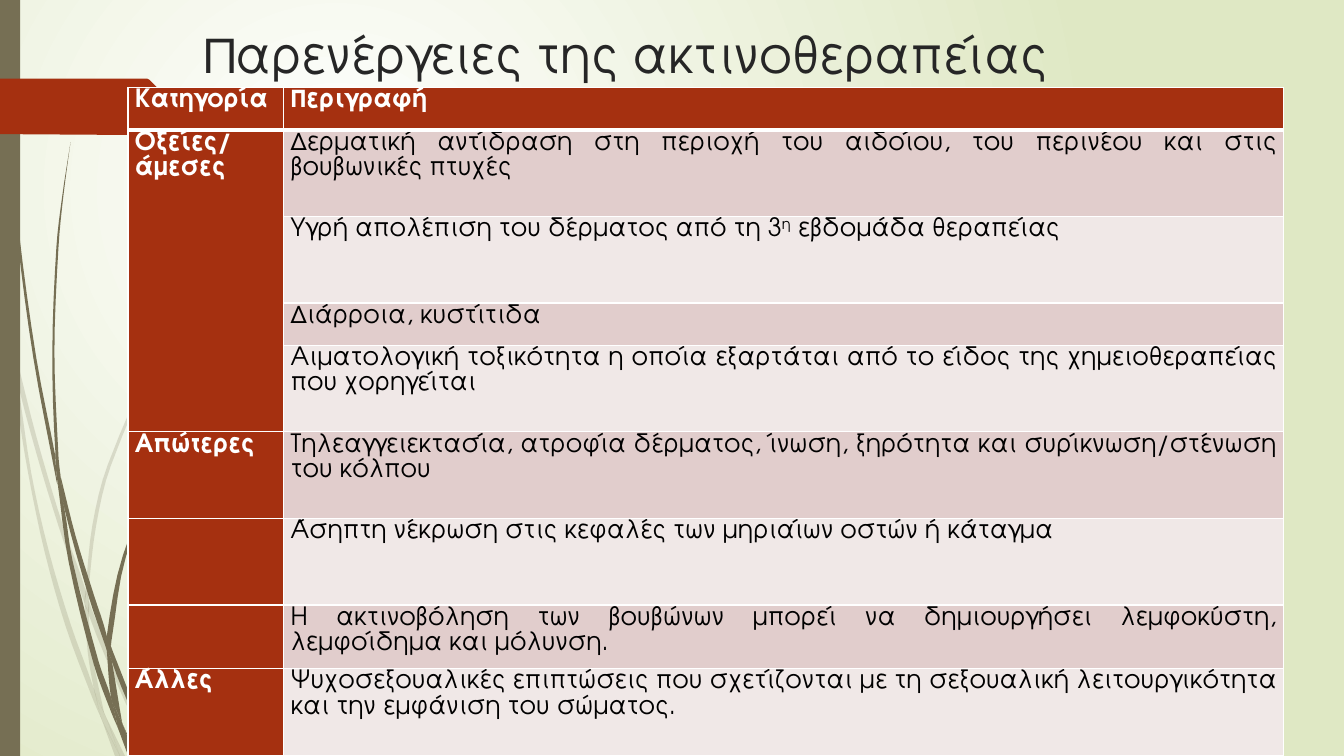
import pptx
import pptx.dml.color
import pptx.enum.shapes
import pptx.enum.text
import pptx.oxml
import pptx.oxml.ns
import pptx.util

Pt = pptx.util.Pt
RGB = pptx.dml.color.RGBColor
ALIGN = pptx.enum.text.PP_ALIGN
TOP = pptx.enum.text.MSO_ANCHOR.TOP
RECT = pptx.enum.shapes.MSO_SHAPE.RECTANGLE

WHITE = RGB(0xFF, 0xFF, 0xFF)
BLACK = RGB(0x00, 0x00, 0x00)
INK = RGB(0x26, 0x26, 0x26)
RED = RGB(0xA5, 0x30, 0x10)
OLIVE = RGB(0x76, 0x6F, 0x54)
LIME = RGB(0xDF, 0xE8, 0xC4)
BANDS = (RGB(0xF0, 0xE8, 0xE7), RGB(0xE1, 0xCD, 0xCC))
FONT = "TeX Gyre Adventor"

TITLE = "Παρενέργειες της ακτινοθεραπείας"
# (row height, category, description); a tuple alternates plain and raised text
ROWS = [
    (30.1, "Κατηγορία", "Περιγραφή"),
    (61.9, "Οξείες/άμεσες",
     "Δερματική αντίδραση στη περιοχή του αιδοίου, του περινέου και στις βουβωνικές πτυχές"),
    (61.9, "", ("Υγρή απολέπιση του δέρματος από τη 3", "η", " εβδομάδα θεραπείας")),
    (30.1, "", "Διάρροια, κυστίτιδα"),
    (61.9, "",
     "Αιματολογική τοξικότητα η οποία εξαρτάται από το είδος της χημειοθεραπείας που χορηγείται"),
    (61.9, "Απώτερες",
     "Τηλεαγγειεκτασία, ατροφία δέρματος, ίνωση, ξηρότητα και συρίκνωση/στένωση του κόλπου"),
    (61.9, "", "Άσηπτη νέκρωση στις κεφαλές των μηριαίων οστών ή κάταγμα"),
    (45.5, "",
     "Η ακτινοβόληση των βουβώνων μπορεί να δημιουργήσει λεμφοκύστη, λεμφοίδημα και μόλυνση."),
    (61.9, "Άλλες", "Ψυχοσεξουαλικές επιπτώσεις που σχετίζονται με τη "
     "σεξουαλική λειτουργικότητα και την εμφάνιση του σώματος."),
]
WIDTHS = (111.2, 714.2)
ACUTE = (1, 4)  # first and last row of the merged category

# Corner points of the grass blades
PALE = [
    [(7.9, 252), (6.5, 231.8), (0, 203), (0, 215.3), (7.2, 247.7)],
    [(41.8, 375.8), (60.5, 431.3), (61.2, 421.9), (44.6, 374.4), (26, 312), (10.1, 248.4),
     (12.2, 270.7), (25.9, 323.5)],
    [(66.2, 437), (63.4, 429.1), (63.4, 439.2), (88.6, 499.7), (108, 540), (111.6, 540), (91.4, 498.2)],
    [(85.7, 540), (89.3, 540), (75.6, 511.9)],
    [(67, 491.8), (50.4, 445.7), (34.5, 392.2), (22.3, 337.7), (12.2, 270.7), (7.9, 252), (13.2, 295.2),
     (20.2, 338.4), (31.6, 393), (46.8, 447.1), (66.2, 499), (72.7, 514.1), (71.3, 509)],
    [(60.5, 431.3), (62.6, 465.1), (67, 491.8), (69.1, 498.2), (75.6, 511.9), (74.2, 508.3),
     (65.5, 465.1), (63.4, 439.2), (63.4, 437.8)],
    [(63.4, 420.5), (68.6, 375.8), (79.2, 332.6), (115.2, 251.3), (164.9, 176.4), (193, 142.6),
     (208.8, 126), (224.6, 110.9), (224.6, 110.2), (208.1, 126), (193, 141.8), (164.2, 175.7),
     (113.8, 250.6), (77, 331.9), (65.9, 375.7), (61.2, 420.5), (61.2, 421.9), (63.4, 429.1)],
    [(72.7, 514.1), (82.1, 540), (85.7, 540)],
    [(63.4, 437.8), (63.4, 429.1), (61.2, 421.9), (60.5, 431.3)],
    [(69.1, 498.2), (67, 491.8), (71.3, 509), (72.7, 514.1), (85.7, 540), (75.6, 511.9)],
]
DARK = [
    [(5, 79.2), (12.2, 167.8), (23.8, 255.6), (40.3, 343.4), (41, 346.3), (39.6, 329), (39.6, 326.2),
     (25.9, 255.6), (13.7, 167), (5.8, 78.5), (3.6, 34.6), (2.9, 0), (2.2, 0), (2.9, 34.6)],
    [(63.4, 426.2), (76.3, 464.4), (76.3, 454.3), (67, 424.8), (54, 382.9), (43.2, 339.8), (46.1, 363.6)],
    [(81.4, 467.3), (79.2, 461.5), (79.9, 472.3), (95, 509.8), (109.4, 539.3), (113, 539.3), (97.9, 508.3)],
    [(79.2, 497.5), (70.6, 473), (51.8, 400.3), (46.1, 363.6), (41, 343.4), (49, 401), (67, 474.5),
     (79.9, 509.8), (84.2, 519.8), (83.5, 516.2)],
    [(43.2, 339.8), (41.8, 326.2), (38.9, 251.3), (41.8, 176.4), (45.4, 139), (50.4, 101.5), (44.6, 139),
     (40.3, 176.4), (37.4, 251.3), (39.6, 323.3)],
    [(95.8, 539.3), (97.9, 539.3), (87.8, 517.7)],
    [(41, 343.4), (46.1, 363.6), (43.2, 339.8), (39.6, 323.3), (39.6, 326.2)],
    [(79.9, 455.8), (90, 397.4), (113.8, 342.7), (147.6, 292.3), (166.3, 269.3), (176.4, 258.5),
     (187.9, 247.7), (187.2, 247.7), (176.4, 257.8), (166.3, 268.6), (146.9, 291.6), (112.3, 341.3),
     (87.8, 396.7), (76.3, 454.3), (79.2, 461.5)],
    [(84.2, 519.8), (91.4, 539.3), (94.3, 539.3)],
    [(76.3, 464.4), (79.2, 497.5), (83.5, 508.3), (87.8, 517.7), (87.1, 515.5), (79.9, 472.3), (78.5, 468.7)],
    [(76.3, 464.4), (78.5, 468.7), (79.9, 472.3), (79.2, 461.5), (76.3, 454.3)],
    [(83.5, 508.3), (79.2, 497.5), (83.5, 516.2), (84.2, 519.8), (93.6, 539.3), (95.8, 539.3), (87.8, 517.7)],
]
ARROW = [(0, 56.2), (105.1, 56.2), (106.6, 56.9), (124.6, 74.9), (125.3, 76.3), (124.6, 77.8),
         (106.6, 95.8), (105.1, 96.5), (0, 95.8)]

def xml(tag, inner="", **attrs):
    space = pptx.oxml.ns.nsdecls("a")
    extra = "".join(f' {key}="{val}"' for key, val in attrs.items())
    return pptx.oxml.parse_xml(f"<a:{tag} {space}{extra}>{inner}</a:{tag}>")

def curve(points):
    """Round the gentle bends and keep the sharp corners."""
    spots = [complex(*point) for point in points]
    legs = [end - spot for spot, end in zip(spots, spots[1:] + spots[:1])]
    ways = [leg / abs(leg) for leg in legs]
    bends = []
    for i, leg in enumerate(legs):
        both = legs[i - 1] + leg
        bends.append(both / abs(both) if abs(ways[i - 1] + ways[i]) > 1.9 else None)
    dots = []
    for spot, leg, way, a, b in zip(spots, legs, ways, bends, bends[1:] + bends[:1]):
        for t in (0, 0.25, 0.5, 0.75):
            pull = (a or way) * (t**3 - 2 * t**2 + t) + (b or way) * (t**3 - t**2)
            dots.append(spot + leg * (3 * t**2 - 2 * t**3) + abs(leg) * pull)
    return [(dot.real, dot.imag) for dot in dots]

def paint(shape, color):
    shape.shadow.inherit = False
    shape.fill.solid()
    shape.fill.fore_color.rgb = color
    shape.line.fill.background()

def outline(shapes, points, color, alpha=None):
    first, *rest = [(Pt(x), Pt(y)) for x, y in points]
    pen = shapes.build_freeform(*first)
    pen.add_line_segments(rest, close=True)
    shape = pen.convert_to_shape()
    paint(shape, color)
    if alpha:
        tint = shape._element.spPr.find(".//" + pptx.oxml.ns.qn("a:srgbClr"))
        tint.append(xml("alpha", val=alpha * 1000))

def backdrop(slide):
    """Lay a round gradient whose centre is up and to the left."""
    fill = slide.background.fill
    fill.gradient()
    for stop, color, place in zip(fill.gradient_stops, (WHITE, LIME), (0, 1)):
        stop.color.rgb, stop.position = color, place
    grad = slide._element.find(".//" + pptx.oxml.ns.qn("a:gradFill"))
    focus = '<a:fillToRect l="50000" t="50000" r="100000" b="100000"/>'
    grad.replace(grad.find(pptx.oxml.ns.qn("a:lin")), xml("path", focus, path="circle"))

def edge(cell, row):
    """Draw white cell borders, thick under the header."""
    fill = f'<a:solidFill><a:srgbClr val="{WHITE}"/></a:solidFill>'
    for side in "LRTB":
        wide = Pt(3 if (row, side) == (0, "B") else 1)
        cell._tc.get_or_add_tcPr().append(xml("ln" + side, fill, w=wide))

def write(cell, text, color, bold):
    para = cell.text_frame.paragraphs[0]
    para.alignment, para.line_spacing = ALIGN.JUSTIFY, 1.07
    for spot, part in enumerate((text,) if isinstance(text, str) else text):
        if part:
            run = para.add_run()
            run.text = part
            if spot % 2:
                run.font._element.set("baseline", "30000")
    para.font.name, para.font.size, para.font.bold = FONT, Pt(18), bold
    para.font.color.rgb = color

def fill_table(shapes):
    high = sum(row[0] for row in ROWS)
    table = shapes.add_table(len(ROWS), 2, Pt(91.4), Pt(62.6), Pt(sum(WIDTHS)), Pt(high)).table
    for col, width in zip(table.columns, WIDTHS):
        col.width = Pt(width)
    for row, (height, *texts) in enumerate(ROWS):
        table.rows[row].height = Pt(height)
        for col, text in enumerate(texts):
            cell = table.cell(row, col)
            head = row == 0 or col == 0
            cell.margin_left = cell.margin_right = Pt(5)
            cell.margin_top = cell.margin_bottom = 0
            edge(cell, row)
            cell.fill.solid()
            cell.fill.fore_color.rgb = RED if head else BANDS[row % 2]
            write(cell, text, WHITE if head else BLACK, head)
    table.cell(ACUTE[0], 0).merge(table.cell(ACUTE[1], 0))

def main():
    deck = pptx.Presentation()
    deck.slide_width, deck.slide_height = Pt(960), Pt(540)
    slide = deck.slides.add_slide(deck.slide_layouts[5])
    shapes = slide.shapes
    backdrop(slide)
    for blades, alpha in ((PALE, 20), (DARK, None)):
        for blade in blades:
            outline(shapes, curve(blade), OLIVE, alpha)
    paint(shapes.add_shape(RECT, 0, 0, Pt(14.4), Pt(540)), OLIVE)
    outline(shapes, ARROW, RED)
    title = shapes.title
    shapes._spTree.append(title._element)
    title.left, title.top, title.width, title.height = Pt(138.2), Pt(13), Pt(767.5), Pt(61.2)
    title.text_frame.text = TITLE
    title.text_frame.vertical_anchor = TOP
    para = title.text_frame.paragraphs[0]
    para.alignment = ALIGN.LEFT
    para.font.name, para.font.size = FONT, Pt(36)
    para.font.color.rgb = INK
    fill_table(shapes)
    deck.save("out.pptx")

if __name__ == "__main__":
    main()
